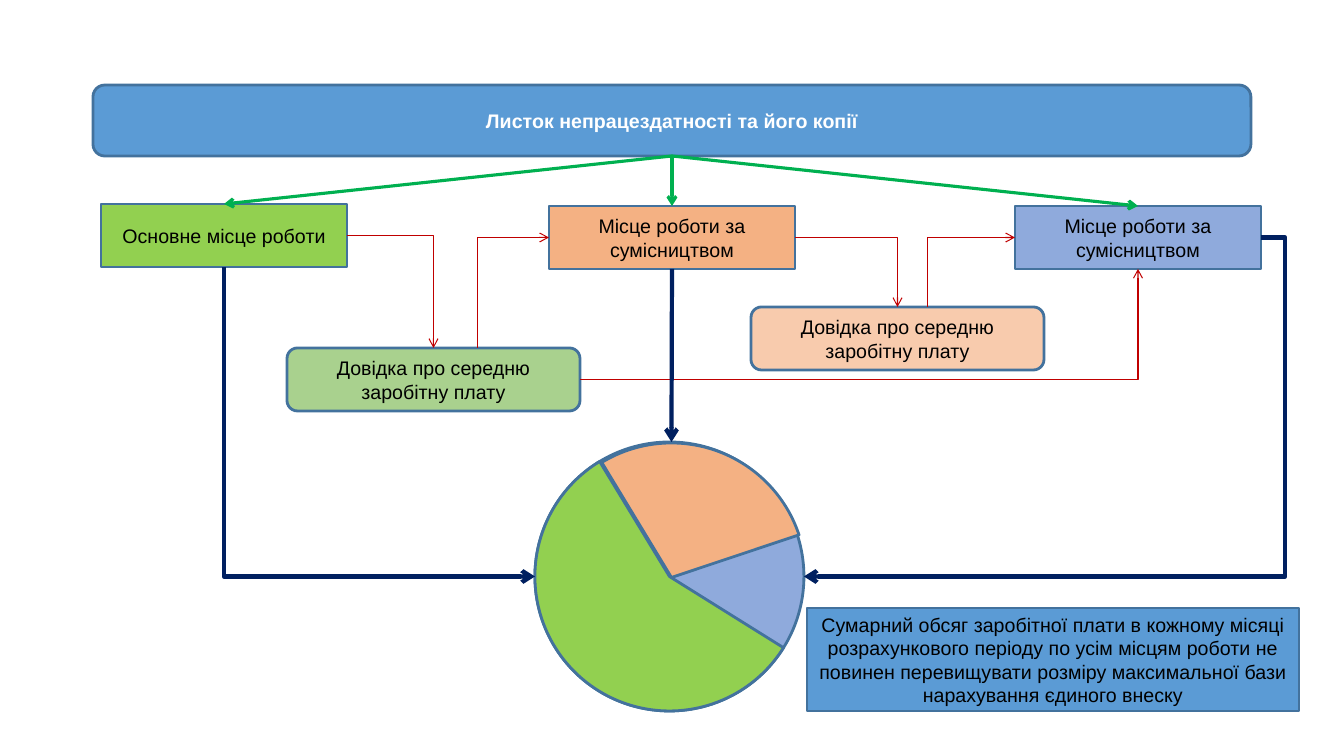
"""Build the slide showing how a sick-leave certificate and its copies reach each workplace."""
from lxml.etree import SubElement
from pptx import Presentation
from pptx.dml.color import RGBColor
from pptx.enum.shapes import MSO_CONNECTOR, MSO_SHAPE
from pptx.enum.text import MSO_ANCHOR, PP_ALIGN
from pptx.oxml.ns import qn
from pptx.util import Emu, Pt

SCALE = 914400 / 100.8
SLIDE_SIZE = (1344, 756)

THEME = {
    "font": "Arial", "text_size": 14, "outline": "43729D", "outline_width": 2,
    "white": "FFFFFF", "black": "000000", "blue": "5B9BD5",
    "main": "92D050", "second": "F4B183", "third": "8FAADC",
    "main_light": "A9D18E", "second_light": "F8CBAD",
    "copy": ("00B050", 2.25), "reference": ("C00000", 0.75), "salary": ("002060", 3),
}
FRAME_FORMAT = {"word_wrap": True, "vertical_anchor": MSO_ANCHOR.MIDDLE}

WORKPLACE = "Місце роботи за сумісництвом"
REFERENCE = "Довідка про середню заробітну плату"
NOTE = ("Сумарний обсяг заробітної плати в кожному місяці розрахункового періоду "
        "по усім місцям роботи не повинен перевищувати розміру максимальної бази "
        "нарахування єдиного внеску")

ROUNDED, SQUARE = MSO_SHAPE.ROUNDED_RECTANGLE, MSO_SHAPE.RECTANGLE
BOXES = {
    "header": (ROUNDED, (93, 85, 1158, 71), "blue", "Листок непрацездатності та його копії"),
    "main": (SQUARE, (101, 204, 246, 63), "main", "Основне місце роботи"),
    "second": (SQUARE, (549, 206, 246, 63), "second", WORKPLACE),
    "third": (SQUARE, (1015, 206, 246, 63), "third", WORKPLACE),
    "main_reference": (ROUNDED, (287, 348, 293, 63), "main_light", REFERENCE),
    "second_reference": (ROUNDED, (751, 307, 293, 63), "second_light", REFERENCE),
    "total": (MSO_SHAPE.OVAL, (535, 442, 269, 269), "third", ""),
    "note": (SQUARE, (807, 608, 492, 103), "blue", NOTE),
}
SLICES = [
    ((535, 442, 269, 269), "main", (19.19, 143.25)),
    ((537, 443, 269, 269), "second", (143.28, 204.93)),
]

STRAIGHT, ELBOW, DETOUR = "line", "bentConnector2", "bentConnector3"
DETOUR_X = 1285
ARROWS = [
    (("main", "right"), ("main_reference", "top"), "reference", ELBOW, "tailEnd"),
    (("second", "right"), ("second_reference", "top"), "reference", ELBOW, "tailEnd"),
    (("total", "left"), ("main", "bottom"), "salary", ELBOW, "headEnd"),
    (("main_reference", "right"), ("third", "bottom"), "reference", ELBOW, "tailEnd"),
    (("second", "left"), ("main_reference", "top", 44), "reference", ELBOW, "headEnd"),
    (("third", "left"), ("second_reference", "top", 30), "reference", ELBOW, "headEnd"),
    (("third", "right"), ("total", "right"), "salary", DETOUR, "tailEnd"),
    (("second", "bottom"), ("total", "top", 2), "salary", STRAIGHT, "tailEnd"),
    (("header", "bottom"), ("main", "top"), "copy", STRAIGHT, "tailEnd"),
    (("header", "bottom"), ("second", "top"), "copy", STRAIGHT, "tailEnd"),
    (("header", "bottom"), ("third", "top"), "copy", STRAIGHT, "tailEnd"),
]


def px(length):
    return Emu(round(length * SCALE))


def apply_format(target, values):
    for name, value in values.items():
        setattr(target, name, value)


def color(name):
    return RGBColor.from_string(THEME[name])


def anchor(box, side, shift=0):
    left, top, width, height = BOXES[box][1]
    middle_x, middle_y = left + width / 2 + shift, top + height / 2
    return {"left": (left, middle_y), "right": (left + width, middle_y),
            "top": (middle_x, top), "bottom": (middle_x, top + height)}[side]


def add_filled_shape(slide, kind, bounds, fill):
    shape = slide.shapes.add_shape(kind, *map(px, bounds))
    shape.shadow.inherit = False
    shape.fill.solid()
    shape.fill.fore_color.rgb = color(fill)
    shape.line.color.rgb = color("outline")
    shape.line.width = Pt(THEME["outline_width"])
    return shape


def add_box(slide, name):
    kind, bounds, fill, text = BOXES[name]
    shape = add_filled_shape(slide, kind, bounds, fill)
    if not text:
        return
    apply_format(shape.text_frame, FRAME_FORMAT)
    paragraph = shape.text_frame.paragraphs[0]
    paragraph.alignment = PP_ALIGN.CENTER
    run = paragraph.add_run()
    run.text = text
    is_header = name == "header"
    apply_format(run.font, {"name": THEME["font"], "size": Pt(THEME["text_size"]), "bold": is_header})
    run.font.color.rgb = color("white" if is_header else "black")


def add_arrow(slide, start, end, style, route, arrow_end):
    begin, finish = anchor(*start), anchor(*end)
    kind = MSO_CONNECTOR.STRAIGHT if route == STRAIGHT else MSO_CONNECTOR.ELBOW
    connector = slide.shapes.add_connector(kind, *map(px, begin + finish))
    line_color, line_width = THEME[style]
    connector.line.color.rgb = RGBColor.from_string(line_color)
    connector.line.width = Pt(line_width)
    properties = connector._element.spPr
    SubElement(properties.find(qn("a:ln")), qn(f"a:{arrow_end}"), type="arrow")
    SubElement(properties, qn("a:effectLst"))
    geometry = properties.find(qn("a:prstGeom"))
    geometry.set("prst", route)
    if route == DETOUR:
        bend = round(100000 * (DETOUR_X - begin[0]) / (finish[0] - begin[0]))
        SubElement(geometry.find(qn("a:avLst")), qn("a:gd"), name="adj1", fmla=f"val {bend}")


def main():
    presentation = Presentation()
    presentation.slide_width, presentation.slide_height = map(px, SLIDE_SIZE)
    slide = presentation.slides.add_slide(presentation.slide_layouts[6])
    for name in BOXES:
        add_box(slide, name)
    for bounds, fill, angles in SLICES:
        pie = add_filled_shape(slide, MSO_SHAPE.PIE, bounds, fill)
        for index, angle in enumerate(angles):
            pie.adjustments[index] = angle
    for arrow in ARROWS:
        add_arrow(slide, *arrow)
    presentation.save("out.pptx")


if __name__ == "__main__":
    main()
